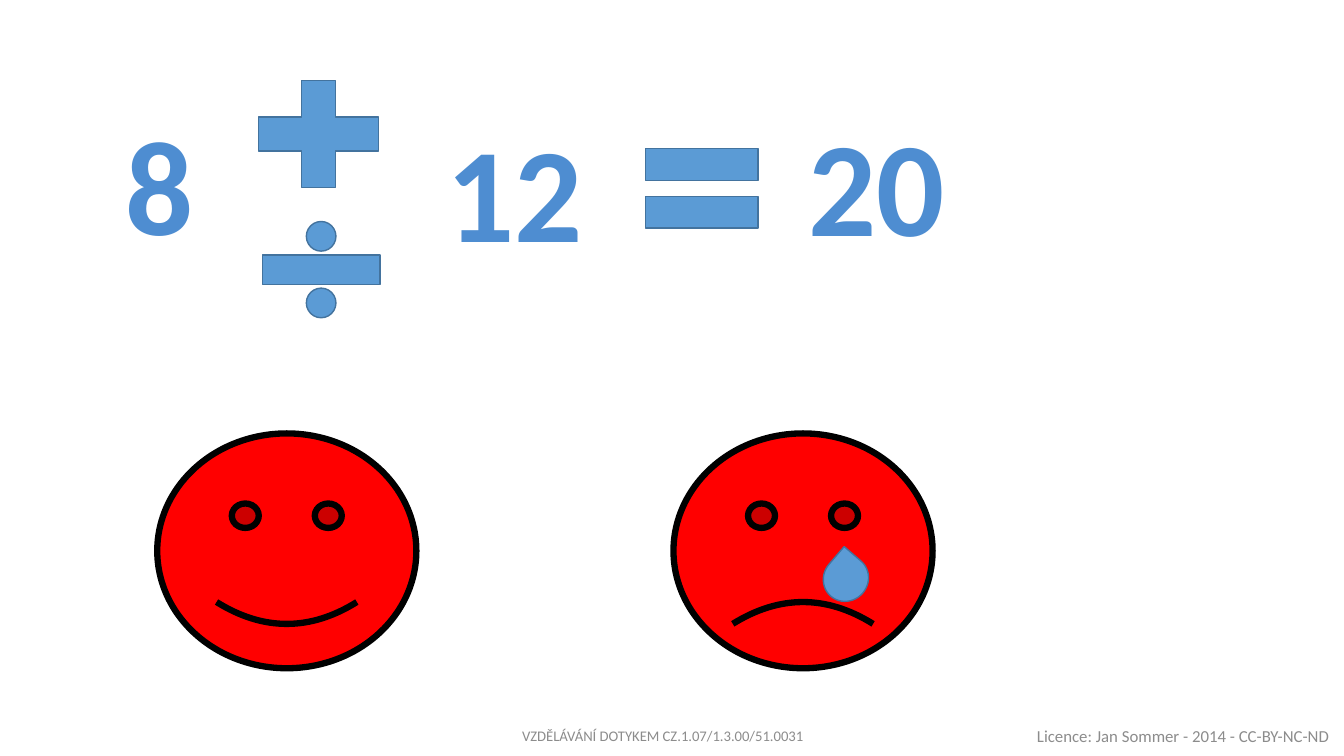
from dataclasses import dataclass
from typing import Optional, Union

from pptx import Presentation
from pptx.dml.color import RGBColor as RGB
from pptx.enum.shapes import MSO_SHAPE as Kind
from pptx.enum.text import MSO_ANCHOR as Anchor, MSO_AUTO_SIZE as Fit, PP_ALIGN as Align
from pptx.shapes.shapetree import GroupShapes, SlideShapes
from pptx.util import Emu, Pt

PX = 9144  # 100 px to the inch
Tree = Union[SlideShapes, GroupShapes]


@dataclass(frozen=True)
class Theme:
    font: str = "Calibri"
    blue: str = "5B9BD5"
    edge: str = "43739E"
    digit: str = "4E8DD1"
    red: str = "FF0000"
    black: str = "000000"
    grey: str = "8C8C8C"
    thin: float = 1
    thick: float = 4.5
    big: float = 96
    note: float = 12
    small: float = 10.5


THEME = Theme()


@dataclass(frozen=True)
class Box:
    left: int
    top: int
    width: int
    height: int

    def emu(self) -> list[Emu]:
        return [Emu(n * PX) for n in (self.left, self.top, self.width, self.height)]


@dataclass(frozen=True)
class Figure:
    kind: Kind
    box: Box
    fill: str = THEME.blue
    line: str = THEME.edge
    weight: float = THEME.thin
    bend: Optional[float] = None
    turn: float = 0


@dataclass(frozen=True)
class Label:
    text: str
    box: Box
    size: float = THEME.big
    color: str = THEME.digit
    bold: bool = True
    fit: Fit = Fit.SHAPE_TO_FIT_TEXT
    anchor: Anchor = Anchor.TOP
    align: Align = Align.LEFT


def draw(tree: Tree, fig: Figure) -> None:
    shape = tree.add_shape(fig.kind, *fig.box.emu())
    shape.shadow.inherit = False
    shape.fill.solid()
    shape.fill.fore_color.rgb = RGB.from_string(fig.fill)
    shape.line.color.rgb = RGB.from_string(fig.line)
    shape.line.width = Pt(fig.weight)
    shape.rotation = fig.turn
    if fig.bend is not None:
        shape.adjustments[0] = fig.bend


def write(tree: Tree, label: Label) -> None:
    frame = tree.add_textbox(*label.box.emu()).text_frame
    frame.word_wrap = True
    frame.auto_size = label.fit
    frame.vertical_anchor = label.anchor
    para = frame.paragraphs[0]
    para.text = label.text
    para.alignment = label.align
    para.font.name = THEME.font
    para.font.size = Pt(label.size)
    para.font.bold = label.bold
    para.font.color.rgb = RGB.from_string(label.color)


def face(left: int, bend: Optional[float] = None) -> Figure:
    return Figure(Kind.SMILEY_FACE, Box(left, 430, 257, 233),
                  THEME.red, THEME.black, THEME.thick, bend)


def footer(text: str, left: int, width: int, size: float, align: Align) -> Label:
    return Label(text, Box(left, 710, width, 40), size, THEME.grey, False,
                 Fit.NONE, Anchor.MIDDLE, align)


# Sum: numbers and signs
NUMBERS = [
    Label("8", Box(115, 95, 82, 172)),
    Label("12", Box(433, 102, 187, 172)),
    Label("20", Box(792, 96, 187, 172)),
]
SIGNS = [
    Figure(Kind.MATH_PLUS, Box(235, 61, 162, 144)),
    Figure(Kind.MATH_DIVIDE, Box(239, 205, 159, 125)),
    Figure(Kind.MATH_EQUAL, Box(620, 120, 152, 134)),
]

# Faces for a right and a wrong answer
HAPPY = face(156)
SAD = [
    face(668, -0.0465),
    Figure(Kind.TEAR, Box(816, 552, 46, 44), turn=310.6),
]

NOTES = [
    footer("Licence: Jan Sommer - 2014 - CC-BY-NC-ND", 1014, 319, THEME.note, Align.CENTER),
    footer("VZDĚLÁVÁNÍ DOTYKEM CZ.1.07/1.3.00/51.0031", 508, 317, THEME.small, Align.LEFT),
]


def main() -> None:
    deck = Presentation()
    deck.slide_width, deck.slide_height = Emu(1333 * PX), Emu(750 * PX)
    tree = deck.slides.add_slide(deck.slide_layouts[6]).shapes

    for fig in [*SIGNS, HAPPY]:
        draw(tree, fig)

    # The sad face and its tear move together
    group = tree.add_group_shape()
    for fig in SAD:
        draw(group.shapes, fig)

    for label in NUMBERS + NOTES:
        write(tree, label)

    deck.save("out.pptx")


if __name__ == "__main__":
    main()
